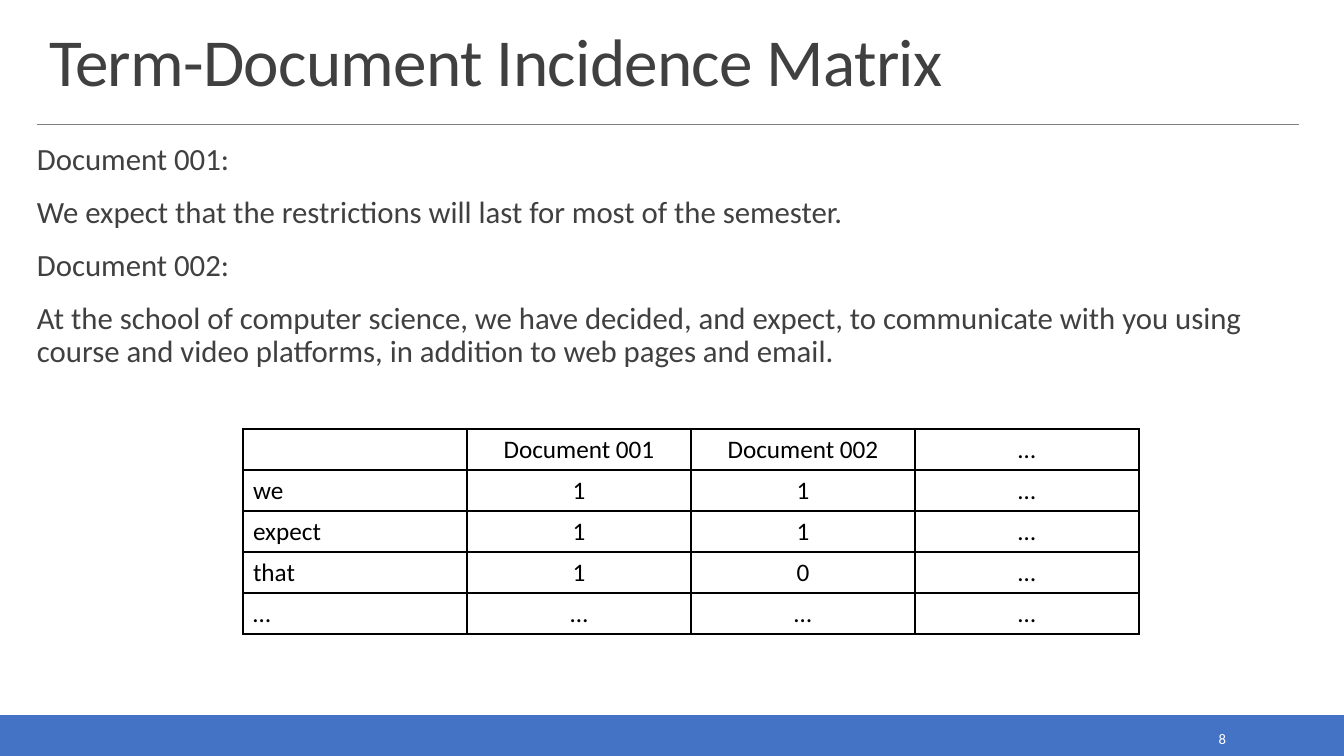
from dataclasses import dataclass

from pptx import Presentation, util as u
from pptx.dml.color import RGBColor
from pptx.enum import shapes, text
from pptx.oxml import parse_xml
from pptx.oxml.ns import nsdecls
from pptx.oxml.xmlchemy import OxmlElement

SLIDE_W, SLIDE_H = 1344, 756
EMU_PER_PX = u.Inches(1) / 100.8
FONT = "Calibri"
COLOURS = {
    "text": "404040",
    "bar": "4472C4",
    "rule": "808080",
    "table": "000000",
    "number": "FFFFFF",
}
PARAGRAPHS = [
    "Document 001:",
    "We expect that the restrictions will last for most of the semester.",
    "Document 002:",
    "At the school of computer science, we have decided, and expect, to communicate "
    "with you using course and video platforms, in addition to web pages and email.",
]
MATRIX = [
    ["", "Document 001", "Document 002", "…"],
    ["we", "1", "1", "…"],
    ["expect", "1", "1", "…"],
    ["that", "1", "0", "…"],
    ["…", "…", "…", "…"],
]
COL_W, ROW_H = 224, 41


@dataclass(frozen=True)
class Box:
    x: int
    y: int
    w: int
    h: int

    def emu(self) -> list[u.Emu]:
        return [px(v) for v in (self.x, self.y, self.w, self.h)]


@dataclass(frozen=True)
class Style:
    size: float
    colour: str
    align: text.PP_ALIGN = text.PP_ALIGN.LEFT


TITLE = Style(48, "text")
BODY = Style(22, "text")
NUMBER = Style(10.5, "number", text.PP_ALIGN.RIGHT)
TERM = Style(18, "table")
VALUE = Style(18, "table", text.PP_ALIGN.CENTER)


def px(n: int) -> u.Emu:
    return u.Emu(round(n * EMU_PER_PX))


def rgb(name: str) -> RGBColor:
    return RGBColor.from_string(COLOURS[name])


def write(tf, content: str, style: Style) -> None:
    """Set the text and format every paragraph and run alike."""
    tf.text = content
    for p in tf.paragraphs:
        p.alignment = style.align
        for r in p.runs:
            r.font.name = FONT
            r.font.size = u.Pt(style.size)
            r.font.color.rgb = rgb(style.colour)


def place(sp, box: Box) -> None:
    sp.left, sp.top, sp.width, sp.height = box.emu()
    sp.text_frame.word_wrap = True
    sp.text_frame.auto_size = text.MSO_AUTO_SIZE.NONE


def add_title(s) -> None:
    sp = s.shapes.title
    place(sp, Box(39, 20, 1262, 85))
    tf = sp.text_frame
    tf.vertical_anchor = text.MSO_ANCHOR.BOTTOM
    write(tf, "Term-Document Incidence Matrix", TITLE)
    p = tf.paragraphs[0]
    p.line_spacing = 0.85
    p.runs[0].font._element.set("spc", "-50")


def add_body(s) -> None:
    sp = s.placeholders[1]
    place(sp, Box(37, 140, 1262, 254))
    tf = sp.text_frame
    tf.vertical_anchor = text.MSO_ANCHOR.TOP
    tf.margin_left = tf.margin_right = 0
    tf.margin_top = tf.margin_bottom = px(4)
    write(tf, "\n".join(PARAGRAPHS), BODY)
    for p in tf.paragraphs:
        p.line_spacing = 0.9
        p.space_before, p.space_after = u.Pt(12), u.Pt(2)
        pPr = p._p.get_or_add_pPr()
        pPr.set("marL", "0")
        pPr.set("indent", "0")
        pPr.append(OxmlElement("a:buNone"))


def add_rule(s) -> None:
    c = s.shapes.add_connector(
        shapes.MSO_CONNECTOR.STRAIGHT, px(37), px(124), px(1299), px(124))
    c.line.color.rgb = rgb("rule")
    c.line.width = u.Pt(0.5)
    c._element.spPr.append(OxmlElement("a:effectLst"))


def add_footer(s) -> None:
    bar = s.shapes.add_shape(
        shapes.MSO_SHAPE.RECTANGLE, *Box(0, 716, SLIDE_W, 40).emu())
    bar.shadow.inherit = False
    bar.fill.solid()
    bar.fill.fore_color.rgb = bar.line.color.rgb = rgb("bar")
    bar.line.width = u.Pt(1.25)

    box = Box(1092, 725, 144, 28)
    number = s.shapes.add_textbox(*box.emu())
    place(number, box)
    number.text_frame.vertical_anchor = text.MSO_ANCHOR.MIDDLE
    write(number.text_frame, "8", NUMBER)


def border_cell(cell) -> None:
    tcPr = cell._tc.get_or_add_tcPr()
    for side in ("lnL", "lnR", "lnT", "lnB"):
        tcPr.append(parse_xml(
            f'<a:{side} {nsdecls("a")} w="{u.Pt(1)}"><a:solidFill>'
            f'<a:srgbClr val="{COLOURS["table"]}"/></a:solidFill></a:{side}>'))


def add_matrix(s) -> None:
    n_rows, n_cols = len(MATRIX), len(MATRIX[0])
    box = Box(243, 429, COL_W * n_cols, ROW_H * n_rows)
    table = s.shapes.add_table(n_rows, n_cols, *box.emu()).table
    table.first_row = table.horz_banding = False
    for col in table.columns:
        col.width = px(COL_W)
    for row, values in zip(table.rows, MATRIX):
        row.height = px(ROW_H)
        for i, (cell, value) in enumerate(zip(row.cells, values)):
            write(cell.text_frame, value, VALUE if i else TERM)
            border_cell(cell)
            cell.fill.background()


def main() -> None:
    prs = Presentation()
    prs.slide_width, prs.slide_height = px(SLIDE_W), px(SLIDE_H)
    s = prs.slides.add_slide(prs.slide_layouts[1])
    add_rule(s)
    add_title(s)
    add_body(s)
    add_footer(s)
    add_matrix(s)
    prs.save("out.pptx")


if __name__ == "__main__":
    main()
